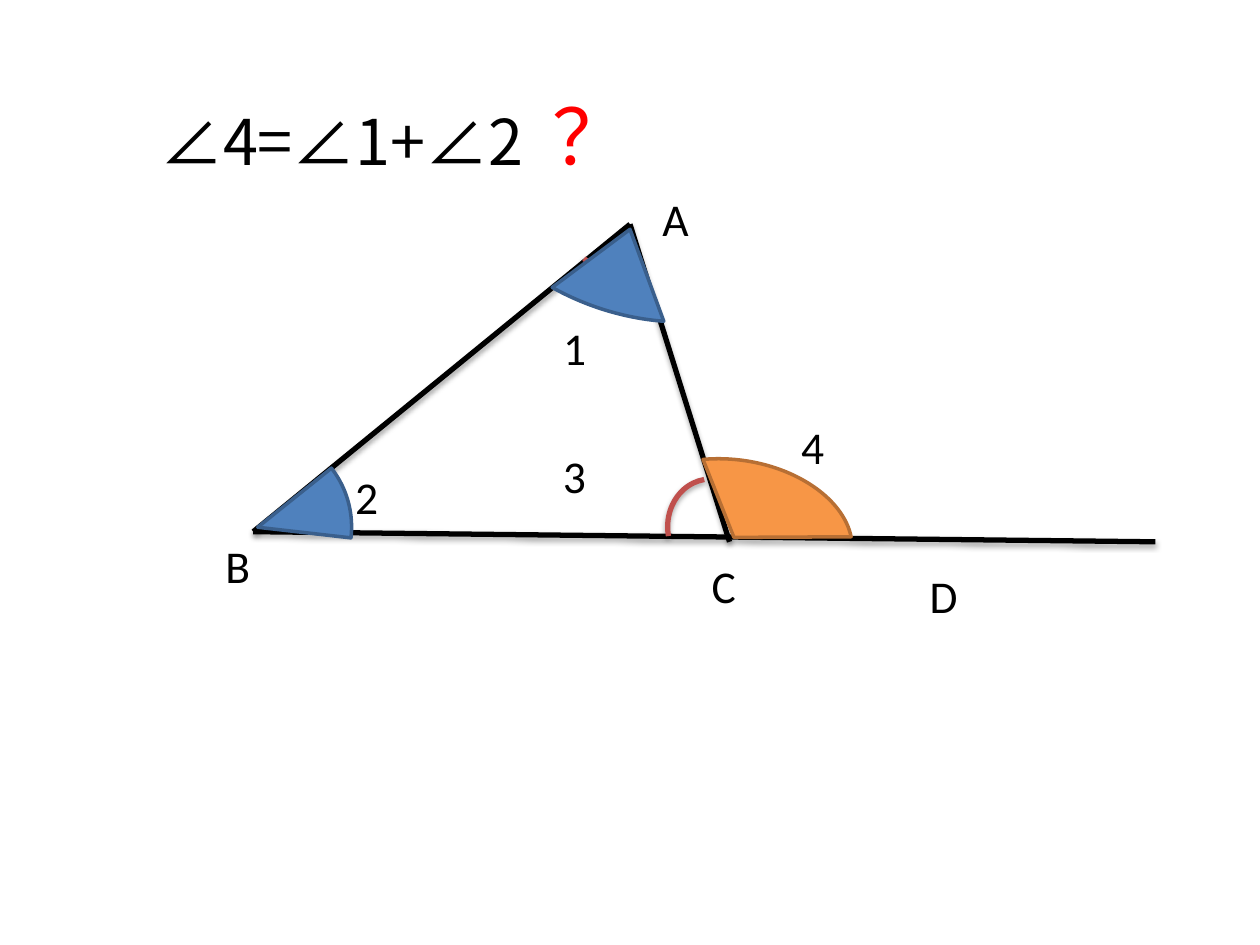
from dataclasses import dataclass

from lxml.etree import SubElement
from pptx import Presentation
from pptx.dml.color import RGBColor
from pptx.enum.shapes import MSO_CONNECTOR as Connector, MSO_SHAPE as Shape
from pptx.enum.text import MSO_ANCHOR as Anchor, MSO_AUTO_SIZE as AutoSize, PP_ALIGN as Align
from pptx.oxml.ns import qn
from pptx.util import Inches, Pt


@dataclass(frozen=True)
class Theme:
    ink: str = "000000"
    question: str = "FF0000"
    arc: str = "C0504D"
    inner: tuple = ("4F81BD", "3A5F8C")
    outer: tuple = ("F79646", "B76F34")
    label_font: str = "Calibri"
    title_font: str = "Noto Sans CJK SC"
    label_size: int = 26
    title_size: int = 36
    question_size: int = 44
    side_width: int = 3
    sector_width: int = 2


THEME = Theme()

# Vertices and line end, relative to the figure's top left corner
A, B, C, END = (3.31, 0.31), (0.32, 2.75), (4.1, 2.83), (7.48, 2.83)
SIDES = [(A, B), (B, END), (A, C)]

# text, left, top, width
LABELS = [
    ("A", 3.47, 0, 0.94), ("B", 0, 2.75, 1.02),
    ("C", 3.86, 2.91, 0.71), ("D", 5.59, 2.99, 1.18),
    ("1", 2.68, 1.02, 1.42), ("2", 1.03, 2.2, 1.1),
    ("4", 4.57, 1.81, 0.79), ("3", 2.68, 2.04, 0.94),
]

# left, top, width, height, rotation
ARCS = [
    (3.78, 2.52, 0.55, 0.47, 0), (0.4, 2.44, 0.63, 0.63, 0),
    (2.86, -0.01, 0.42, 0.85, 126.9), (3.57, 2.37, 0.79, 0.71, 260.4),
]

# left, top, width, height, rotation, start and end in degrees, colours
SECTORS = [
    (-0.4, 1.97, 1.51, 1.49, 96.5, 224.76, 270, THEME.inner),
    (2.09, -0.32, 2.44, 1.34, 197.1, 232.72, 306.17, THEME.inner),
    (3.19, 2.18, 1.89, 1.23, 8.6, 239.78, 351.12, THEME.outer),
]


def color(code):
    return RGBColor.from_string(code)


def set_line(shape, code, width):
    shape.line.color.rgb = color(code)
    shape.line.width = Pt(width)


def add_soft_shadow(shape):
    effects = SubElement(shape._element.spPr, qn("a:effectLst"))
    shadow = SubElement(effects, qn("a:outerShdw"), blurRad=str(Pt(3.1)),
                        dist=str(Pt(1.8)), dir="5400000", rotWithShape="0")
    tint = SubElement(shadow, qn("a:srgbClr"), val=THEME.ink)
    SubElement(tint, qn("a:alpha"), val="35000")


def add_span(para, text, size, font, code):
    span = para.add_run()
    span.text = text
    span.font.size = Pt(size)
    span.font.color.rgb = color(code)
    span.font.name = font
    SubElement(span.font._element, qn("a:ea"), typeface=font)


def place_title(page, left, top, width, height):
    title = page.shapes.title
    title.left, title.top = Inches(left), Inches(top)
    title.width, title.height = Inches(width), Inches(height)
    frame = title.text_frame
    frame.word_wrap = True
    frame.auto_size = AutoSize.SHAPE_TO_FIT_TEXT
    frame.vertical_anchor = Anchor.TOP
    para = frame.paragraphs[0]
    para.alignment = Align.LEFT
    add_span(para, "∠4=∠1+∠2  ", THEME.title_size, THEME.title_font, THEME.ink)
    add_span(para, "？", THEME.question_size, THEME.title_font, THEME.question)


def add_side(page, start, end):
    side = page.shapes.add_connector(
        Connector.STRAIGHT, *(Inches(value) for value in (*start, *end)))
    set_line(side, THEME.ink, THEME.side_width)
    add_soft_shadow(side)


def add_label(page, text, left, top, width):
    box = page.shapes.add_textbox(
        Inches(left), Inches(top), Inches(width), Inches(0.54))
    frame = box.text_frame
    frame.word_wrap = True
    frame.auto_size = AutoSize.SHAPE_TO_FIT_TEXT
    add_span(frame.paragraphs[0], text, THEME.label_size, THEME.label_font, THEME.ink)


def add_turned(page, kind, left, top, width, height, rotation):
    shape = page.shapes.add_shape(
        kind, Inches(left), Inches(top), Inches(width), Inches(height))
    shape.rotation = rotation
    return shape


def add_arc(page, *box):
    arc = add_turned(page, Shape.ARC, *box)
    arc.fill.background()
    set_line(arc, THEME.arc, THEME.side_width)
    add_soft_shadow(arc)


def add_sector(page, *box, start, end, colors):
    sector = add_turned(page, Shape.PIE, *box)
    # Angles are stored in 1/60000 degree, adjustments in 1/100000
    sector.adjustments[0], sector.adjustments[1] = start * 0.6, end * 0.6
    sector.shadow.inherit = False
    fill, outline = colors
    sector.fill.solid()
    sector.fill.fore_color.rgb = color(fill)
    set_line(sector, outline, THEME.sector_width)


def draw_triangle(page, left, top):
    def shift(x, y):
        return left + x, top + y

    for start, end in SIDES:
        add_side(page, shift(*start), shift(*end))
    for x, y, *rest in ARCS:
        add_arc(page, *shift(x, y), *rest)
    for text, x, y, width in LABELS:
        add_label(page, text, *shift(x, y), width)
    for x, y, width, height, rotation, start, end, colors in SECTORS:
        add_sector(page, *shift(x, y), width, height, rotation,
                   start=start, end=end, colors=colors)


def main():
    deck = Presentation()
    deck.slide_width, deck.slide_height = Inches(10), Inches(7.5)
    page = deck.slides.add_slide(deck.slide_layouts[5])
    place_title(page, 1.17, 0.65, 7.46, 0.84)
    draw_triangle(page, 1.69, 1.47)
    deck.save("out.pptx")


if __name__ == "__main__":
    main()
